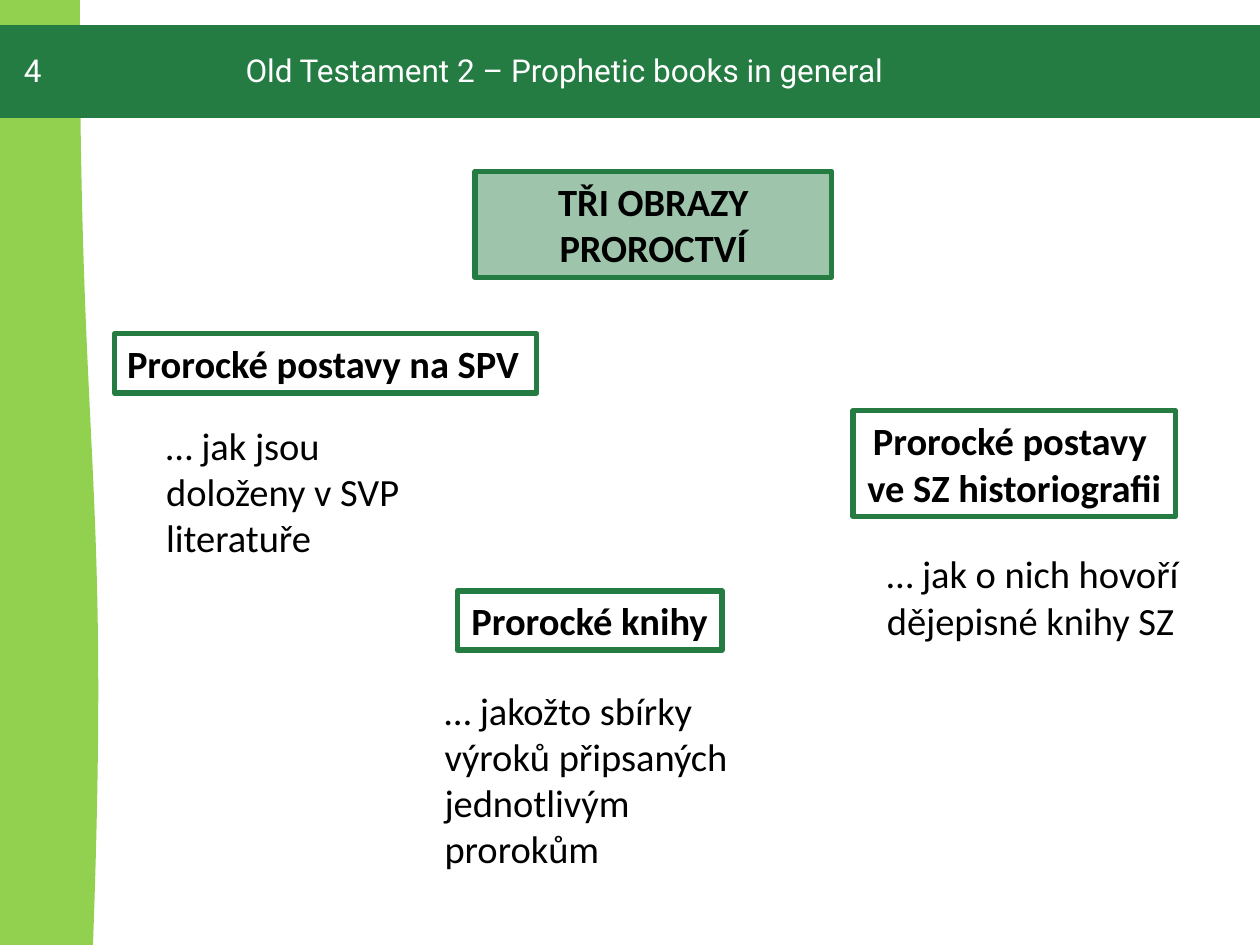
from dataclasses import dataclass

from lxml import etree
from pptx import Presentation
from pptx.dml.color import RGBColor
from pptx.enum import shapes, text
from pptx.oxml import ns
from pptx.util import Inches, Pt


@dataclass(frozen=True)
class Theme:
    green: RGBColor = RGBColor(0x24, 0x7C, 0x43)
    lime: RGBColor = RGBColor(0x92, 0xD0, 0x50)
    black: RGBColor = RGBColor(0, 0, 0)
    white: RGBColor = RGBColor(255, 255, 255)
    body_font: str = "Calibri"
    header_font: str = "Roboto"
    body_size: int = 22
    header_size: int = 18
    box_line: int = 3
    band_line: int = 2
    title_opacity: int = 44


THEME = Theme()
CENTER = text.PP_ALIGN.CENTER
LEFT = text.PP_ALIGN.LEFT


def place(s, box):
    s.left, s.top, s.width, s.height = (Inches(v) for v in box)


def write(s, lines, font, size, color, bold=False, align=LEFT, wrap=True):
    tf = s.text_frame
    tf.word_wrap = wrap
    tf.auto_size = text.MSO_AUTO_SIZE.NONE
    for i, line in enumerate(lines):
        p = tf.add_paragraph() if i else tf.paragraphs[0]
        p.alignment = align
        r = p.add_run()
        r.text = line
        r.font.name, r.font.size, r.font.bold = font, Pt(size), bold
        r.font.color.rgb = color


def write_body(s, lines, **options):
    write(s, lines, THEME.body_font, THEME.body_size, THEME.black, **options)


def write_header(s, line, **options):
    write(s, [line], THEME.header_font, THEME.header_size, THEME.white, **options)


def outline(s, width):
    s.line.color.rgb = THEME.green
    s.line.width = Pt(width)
    etree.SubElement(s.line._get_or_add_ln(), ns.qn("a:round"))


def add_shape(slide, kind, box, fill=None):
    s = slide.shapes.add_shape(kind, *(Inches(v) for v in box))
    s.shadow.inherit = False
    s.line.fill.background()
    if fill is None:
        s.fill.background()
    else:
        s.fill.solid()
        s.fill.fore_color.rgb = fill
    return s


def add_side_wave(slide, box):
    left, top, width, height = box
    offset = (height - width) / 2
    s = add_shape(slide, shapes.MSO_SHAPE.FLOWCHART_DOCUMENT,
                  (left - offset, top + offset, height, width), THEME.lime)
    s.rotation = 270


def add_header(slide, box, number, heading):
    left, top, width, height = box
    band = add_shape(slide, shapes.MSO_SHAPE.RECTANGLE, box, THEME.green)
    outline(band, THEME.band_line)
    text_top, text_height = top + 0.15, height - 0.31
    for x, w, line, wrap in ((1.85, width - 1.85, heading, True),
                             (0.09, 0.31, number, False)):
        s = slide.shapes.add_textbox(Inches(left + x), Inches(text_top),
                                     Inches(w), Inches(text_height))
        write_header(s, line, wrap=wrap)


def add_title(slide, box, line):
    s = slide.shapes.title
    place(s, box)
    s.fill.solid()
    s.fill.fore_color.rgb = THEME.green
    color = s.fill._xPr.find(ns.qn("a:solidFill"))[0]
    etree.SubElement(color, ns.qn("a:alpha"), val=str(THEME.title_opacity * 1000))
    outline(s, THEME.box_line)
    s.text_frame.vertical_anchor = text.MSO_ANCHOR.MIDDLE
    write_body(s, [line], bold=True, align=CENTER)


def add_topic(slide, label_box, label, align, note_box, note):
    s = add_shape(slide, shapes.MSO_SHAPE.RECTANGLE, label_box)
    outline(s, THEME.box_line)
    write_body(s, label, bold=True, align=align, wrap=False)
    tb = slide.shapes.add_textbox(*(Inches(v) for v in note_box))
    write_body(tb, [note])


def main():
    prs = Presentation()
    prs.slide_width, prs.slide_height = Inches(10), Inches(7.5)
    slide = prs.slides.add_slide(prs.slide_layouts[5])

    add_side_wave(slide, (0, 0, 0.79, 7.5))
    add_title(slide, (3.77, 1.36, 2.83, 0.84), "TŘI OBRAZY PROROCTVÍ")
    topics = [
        ((0.91, 2.65, 3.35, 0.47), ["Prorocké postavy na SPV"], LEFT,
         (1.22, 3.3, 2.52, 1.21), "… jak jsou doloženy v SVP literatuře"),
        ((6.77, 3.26, 2.56, 0.84),
         ["Prorocké postavy ", "ve SZ historiografii"], CENTER,
         (6.94, 4.32, 2.52, 0.84), "… jak o nich hovoří dějepisné knihy SZ"),
        ((3.63, 4.69, 2.1, 0.47), ["Prorocké knihy"], CENTER,
         (3.43, 5.4, 2.52, 1.58),
         "… jakožto sbírky výroků připsaných jednotlivým prorokům"),
    ]
    for topic in topics:
        add_topic(slide, *topic)
    add_header(slide, (0, 0.21, 10, 0.71), "4",
               "Old Testament 2 – Prophetic books in general")

    prs.save("out.pptx")


if __name__ == "__main__":
    main()
